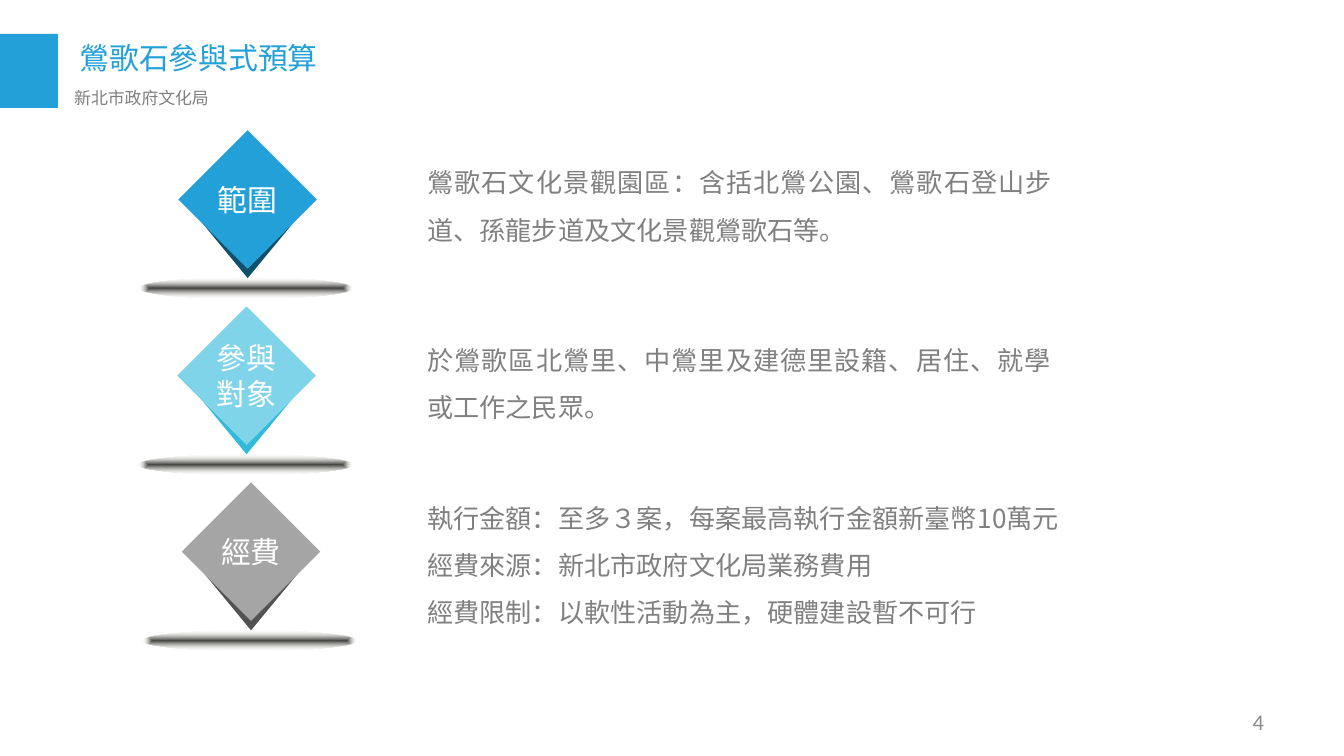
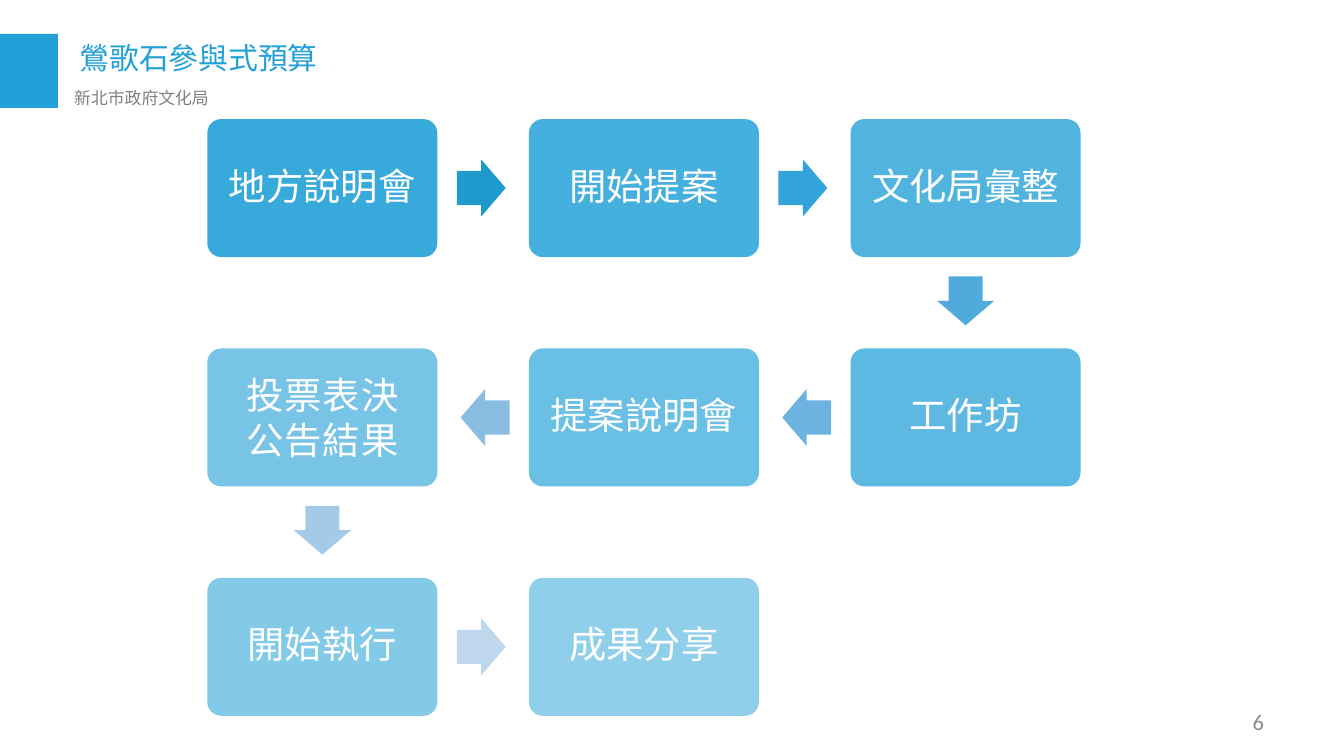
from lxml.etree import SubElement
from pptx import Presentation
from pptx.dml.color import RGBColor
from pptx.enum.shapes import MSO_SHAPE as Form
from pptx.enum.text import MSO_ANCHOR as Anchor, MSO_AUTO_SIZE as Fit, PP_ALIGN as Align
from pptx.oxml import parse_xml
from pptx.oxml.ns import nsdecls, qn
from pptx.util import Pt

# Colours
BLUE = RGBColor(0x22, 0xA0, 0xD7)
NAVY = RGBColor(0x11, 0x50, 0x6C)
SKY = RGBColor(0x7F, 0xD4, 0xE9)
TEAL = RGBColor(0x32, 0xBA, 0xDC)
SILVER = RGBColor(0xA5, 0xA5, 0xA5)
SLATE = RGBColor(0x52, 0x52, 0x52)
GRAY = RGBColor(0x80, 0x80, 0x80)
PALE = RGBColor(0x8C, 0x8C, 0x8C)
WHITE = RGBColor(0xFF, 0xFF, 0xFF)
ARROWS = [RGBColor.from_string(c) for c in (
    "2099CD", "33A3DB", "50ABDC", "6DB3DF", "89BEE2", "A4CAE7", "BED7EC")]

# Fonts
SANS, LATIN, LABEL = "Noto Sans CJK SC", "Calibri", "Roboto"

TITLE, OFFICE = "鶯歌石參與式預算", "新北市政府文化局"

# Gem label, front, back, left, top; then text top, width, height, hang, lines
ROWS = [
    (("範圍", BLUE, NAVY, 95.6, 69.8), (77, 350.6, 59, 0, [
        "鶯歌石文化景觀園區：含括北鶯公園、鶯歌石登山步道、孫龍步道及文化景觀鶯歌石等。"])),
    (("參與對象", SKY, TEAL, 95, 164.2), (172, 350, 56.2, 0, [
        "於鶯歌區北鶯里、中鶯里及建德里設籍、居住、就學或工作之民眾。"])),
    (("經費", SILVER, SLATE, 97.4, 258.5), (257, 371.5, 84.2, 70.5, [
        "執行金額：至多３案，每案最高執行金額新臺幣10萬元",
        "經費來源：新北市政府文化局業務費用",
        "經費限制：以軟性活動為主，硬體建設暫不可行"])),
]
STEPS = [["地方說明會"], ["開始提案"], ["文化局彙整"], ["工作坊"], ["提案說明會"],
         ["投票表決", "公告結果"], ["開始執行"], ["成果分享"]]


def place(x, y, w, h):
    return Pt(x), Pt(y), Pt(w), Pt(h)


def draw(slide, form, box, fill):
    shape = slide.shapes.add_shape(form, *place(*box))
    shape.shadow.inherit = False
    shape.fill.solid()
    shape.fill.fore_color.rgb = fill
    shape.line.fill.background()
    return shape


def write(shape, lines, size, color, font=SANS, align=Align.JUSTIFY,
          inset=(6, 3), anchor=Anchor.TOP, space=None, hang=0, track=0, fit=Fit.NONE):
    frame = shape.text_frame
    frame.word_wrap = True
    frame.auto_size = fit
    frame.vertical_anchor = anchor
    frame.margin_left = frame.margin_right = Pt(inset[0])
    frame.margin_top = frame.margin_bottom = Pt(inset[1])
    for i, line in enumerate(lines):
        para = frame.add_paragraph() if i else frame.paragraphs[0]
        para.alignment = align
        if space:
            para.line_spacing = space
        if hang:
            props = para._p.get_or_add_pPr()
            props.set("marL", str(Pt(hang)))
            props.set("indent", str(-Pt(hang)))
        run = para.add_run()
        run.text = line
        run.font.size = Pt(size)
        run.font.color.rgb = color
        run.font.name = font
        props = run._r.get_or_add_rPr()
        SubElement(props, qn("a:ea")).set("typeface", font)
        if track:
            props.set("spc", str(track))


def note(slide, box, lines, size, color, **style):
    write(slide.shapes.add_textbox(*place(*box)), lines, size, color, **style)


def start(deck, page):
    """Add a slide with the shared band, title, office and page number."""
    slide = deck.slides.add_slide(deck.slide_layouts[5])
    draw(slide, Form.RECTANGLE, (0, 18.2, 31, 39.6), BLUE)
    title = slide.shapes.title
    title.left, title.top, title.width, title.height = place(36.6, 18, 145, 25.2)
    write(title, [TITLE], 16, BLUE, fit=Fit.SHAPE_TO_FIT_TEXT)
    note(slide, (33.8, 43.9, 160.6, 16.6), [OFFICE], 9, GRAY,
         font=LATIN, fit=Fit.SHAPE_TO_FIT_TEXT)
    note(slide, (516.2, 375.8, 168, 21.6), [page], 12, PALE, font=LATIN,
         align=Align.RIGHT, inset=(7.2, 3.6), anchor=Anchor.MIDDLE)
    return slide


def gem(slide, label, front, back, x, y, side=74.2):
    # Soft floor shade, fading out from the centre
    shade = draw(slide, Form.OVAL, (x - 21, y + 79.2, 114.5, 10.8), SLATE)
    props = shade._element.spPr
    props.replace(props.find(qn("a:solidFill")), parse_xml(
        f'<a:gradFill {nsdecls("a")} rotWithShape="1"><a:gsLst>'
        '<a:gs pos="0"><a:srgbClr val="404040"/></a:gs>'
        '<a:gs pos="100000"><a:srgbClr val="EEECE1"><a:alpha val="0"/></a:srgbClr></a:gs>'
        '</a:gsLst><a:path path="shape">'
        '<a:fillToRect l="50000" t="50000" r="50000" b="50000"/></a:path></a:gradFill>'))
    # Two stacked diamonds
    draw(slide, Form.DIAMOND, (x + 6.5, y + 5, side - 13, side), back)
    top = draw(slide, Form.DIAMOND, (x, y, side, side), front)
    write(top, [label], 16, WHITE, font=LABEL, align=Align.CENTER,
          inset=(0, 0), anchor=Anchor.MIDDLE)


def rules(deck):
    slide = start(deck, "4")
    for mark, (top, wide, high, hang, lines) in ROWS:
        gem(slide, *mark)
        note(slide, (221, top, wide, high), lines, 14, GRAY, inset=(7.9, 4),
             space=1.5, hang=hang, fit=Fit.SHAPE_TO_FIT_TEXT)


def card(slide, lines, box, alpha):
    shape = draw(slide, Form.ROUNDED_RECTANGLE, box, BLUE)
    shape.adjustments[0] = 0.1
    tint = next(shape._element.spPr.iter(qn("a:srgbClr")))
    SubElement(tint, qn("a:alpha")).set("val", str(round(alpha * 1000)))
    pair = len(lines) > 1
    write(shape, lines, 20, WHITE, align=Align.CENTER, inset=(5.8, 5.8),
          anchor=Anchor.MIDDLE, space=None if pair else 0.9, track=50 if pair else 0)


def arrow(slide, here, there, color, wide=26.2, high=30.5, lag=1):
    """Point from one card centre to the next, just short of midway."""
    dx, dy = there[0] - here[0], there[1] - here[1]
    gap = abs(dx) + abs(dy)
    x = (here[0] + there[0]) / 2 - lag * dx / gap
    y = (here[1] + there[1]) / 2 - lag * dy / gap
    shape = draw(slide, Form.RIGHT_ARROW, (x - wide / 2, y - high / 2, wide, high), color)
    shape.adjustments[0], shape.adjustments[1] = 0.6, 0.5
    shape.rotation = 90 if dy else 180 if dx < 0 else 0


def flow(deck, left=111.1, top=63.8, wide=123.2, high=73.9, across=172.3, down=122.9):
    slide = start(deck, "6")
    last = None
    for i, lines in enumerate(STEPS):
        # Every second row runs back from right to left
        row, col = divmod(i, 3)
        if row % 2:
            col = 2 - col
        x, y = left + col * across, top + row * down
        card(slide, lines, (x, y, wide, high), 90 - 40 * i / (len(STEPS) - 1))
        mid = (x + wide / 2, y + high / 2)
        if last:
            arrow(slide, last, mid, ARROWS[i - 1])
        last = mid


def main():
    deck = Presentation()
    deck.slide_width, deck.slide_height = Pt(720), Pt(405)
    rules(deck)
    flow(deck)
    deck.save("out.pptx")


if __name__ == "__main__":
    main()
